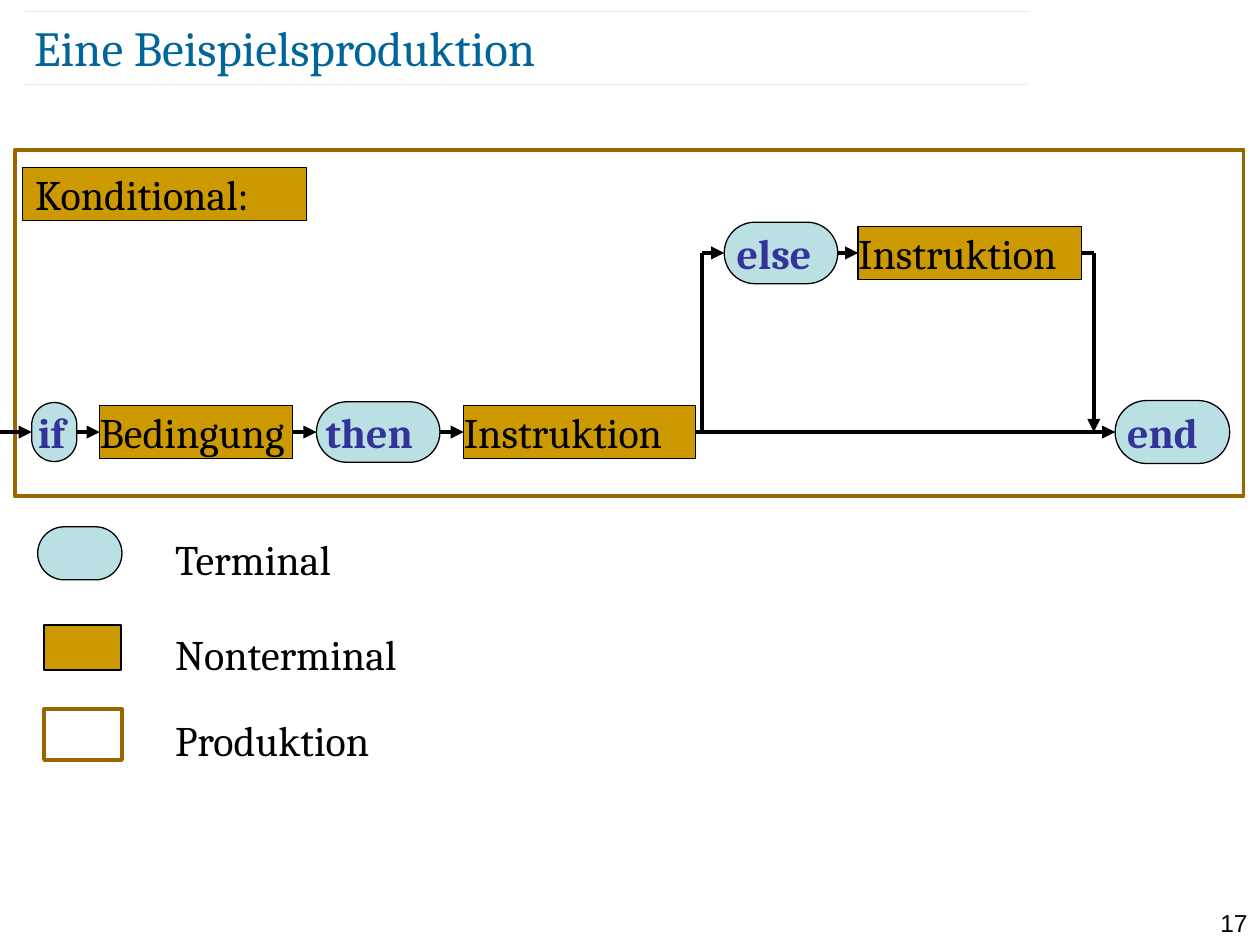
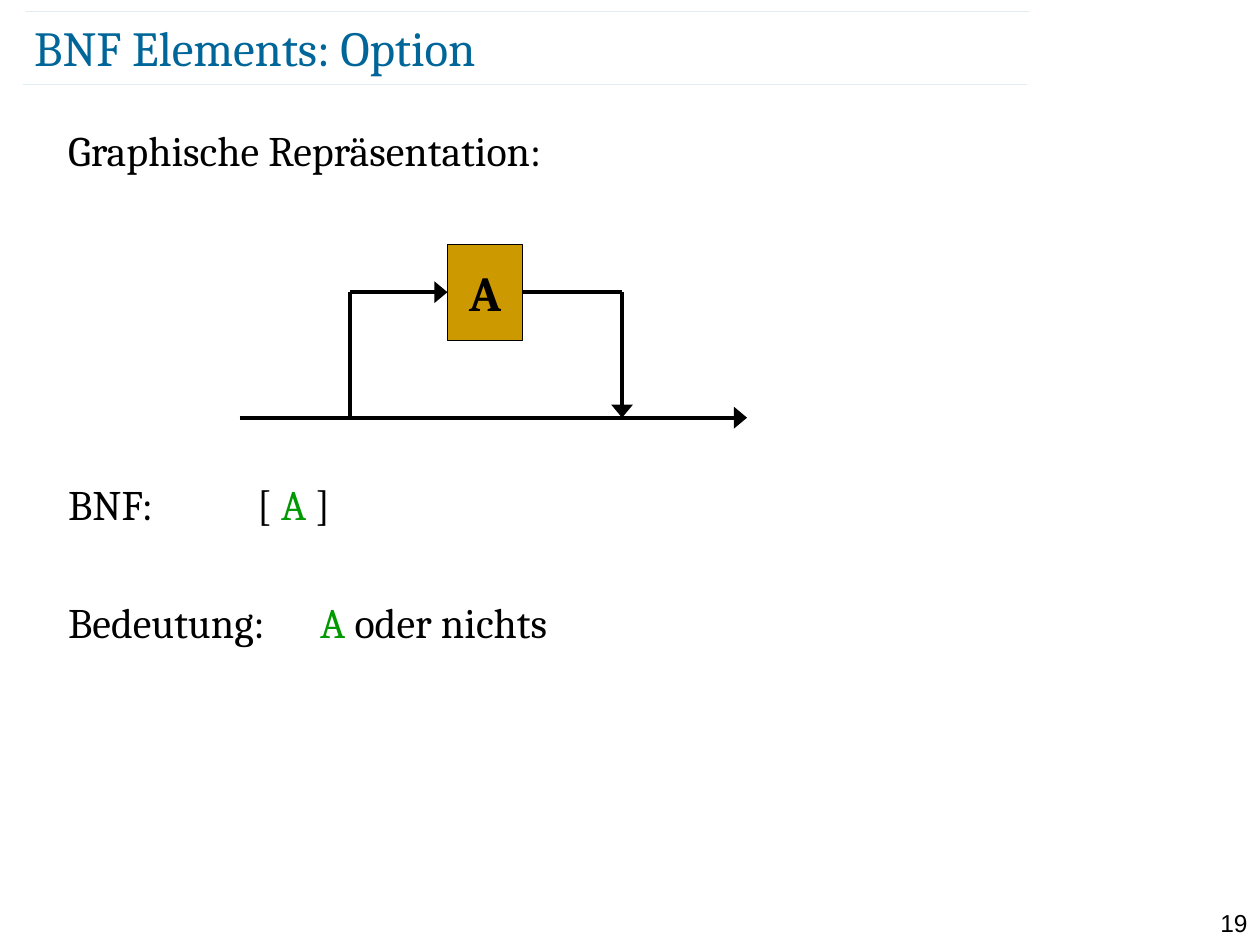
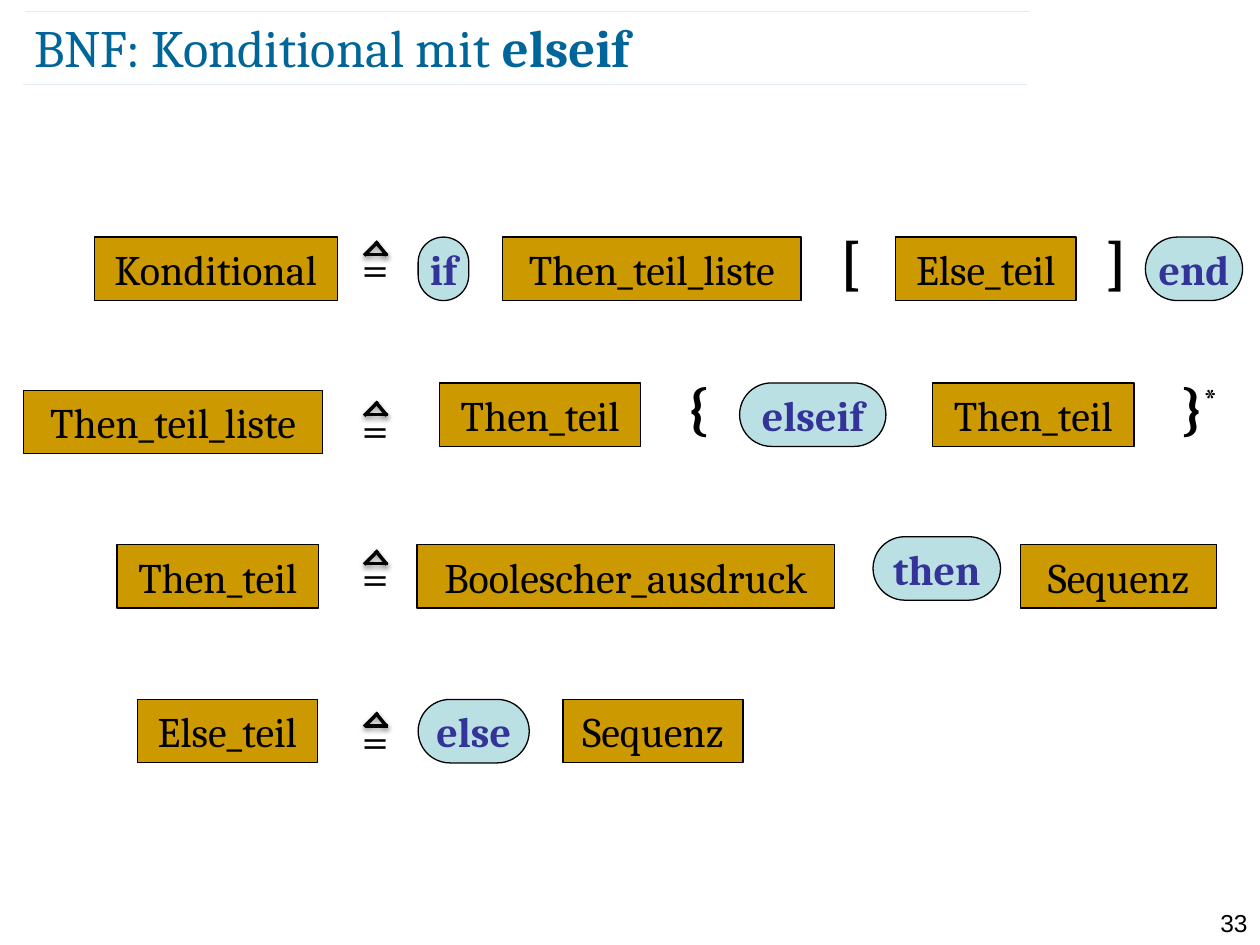
import pptx
import pptx.util
import pptx.dml.color
import pptx.enum.shapes
import pptx.enum.text
import pptx.oxml
import pptx.oxml.ns
from lxml import etree

Cm = pptx.util.Cm
Pt = pptx.util.Pt
RGBColor = pptx.dml.color.RGBColor
MSO_SHAPE = pptx.enum.shapes.MSO_SHAPE
MSO_ANCHOR = pptx.enum.text.MSO_ANCHOR
PP_ALIGN = pptx.enum.text.PP_ALIGN
qn = pptx.oxml.ns.qn

# Shared look
BLUE = RGBColor(0x00, 0x66, 0x99)
BLACK = RGBColor(0x00, 0x00, 0x00)
GOLD = RGBColor(0xCC, 0x99, 0x00)
BROWN = RGBColor(0x99, 0x66, 0x00)
PALE = RGBColor(0xBB, 0xE0, 0xE3)
INDIGO = RGBColor(0x33, 0x33, 0x99)
GREEN = RGBColor(0x00, 0x99, 0x00)
SERIF, SANS = "Cambria", "Arial"
LEFT, CENTER, RIGHT = PP_ALIGN.LEFT, PP_ALIGN.CENTER, PP_ALIGN.RIGHT


# Text and shape helpers
def add_run(p, text, size=24, color=BLACK, bold=False, font=SERIF):
    r = p.add_run()
    r.text = text
    r.font.name, r.font.size, r.font.bold = font, Pt(size), bold
    r.font.color.rgb = color
    return r


def set_margins(tf, left=0, right=0, top=0, bottom=0):
    tf.margin_left, tf.margin_right = Cm(left), Cm(right)
    tf.margin_top, tf.margin_bottom = Cm(top), Cm(bottom)


def add_text(s, x, y, w, h, text, align=LEFT, wrap=True, **style):
    tf = s.shapes.add_textbox(Cm(x), Cm(y), Cm(w), Cm(h)).text_frame
    tf.word_wrap = wrap
    p = tf.paragraphs[0]
    p.alignment = align
    add_run(p, text, **style)
    return p


def add_box(s, x, y, w, h, fill=GOLD, line=BLACK, width=0.75,
            kind=MSO_SHAPE.RECTANGLE):
    sp = s.shapes.add_shape(kind, Cm(x), Cm(y), Cm(w), Cm(h))
    sp.shadow.inherit = False
    if fill is None:
        sp.fill.background()
    else:
        sp.fill.solid()
        sp.fill.fore_color.rgb = fill
    sp.line.color.rgb = line
    sp.line.width = Pt(width)
    return sp


def add_pill(s, x, y, w, h):
    sp = add_box(s, x, y, w, h, PALE, kind=MSO_SHAPE.ROUNDED_RECTANGLE)
    sp.adjustments[0] = 0.5
    return sp


def label(sp, text, align=CENTER, wrap=False, left=0, right=0, **style):
    tf = sp.text_frame
    tf.word_wrap = wrap
    tf.vertical_anchor = MSO_ANCHOR.MIDDLE
    set_margins(tf, left, right)
    p = tf.paragraphs[0]
    p.alignment = align
    add_run(p, text, **style)


def terminal(s, x, y, w, h, text, right=0):
    label(add_pill(s, x, y, w, h), text, right=right, color=INDIGO, bold=True)


def nonterminal(s, x, y, w, h, text, **layout):
    label(add_box(s, x, y, w, h), text, **layout)


def add_line(s, x1, y1, x2, y2, head=None, width=2.5, color=BLACK):
    """Straight line; head is the width of its arrowhead (med or lg)."""
    c = s.shapes.add_connector(pptx.enum.shapes.MSO_CONNECTOR.STRAIGHT,
                               Cm(x1), Cm(y1), Cm(x2), Cm(y2))
    c.line.color.rgb = color
    c.line.width = Pt(width)
    ln = c.line._ln
    if head:
        etree.SubElement(ln, qn("a:tailEnd"), type="triangle", w=head, len="med")
    etree.SubElement(ln.getparent(), qn("a:effectLst"))
    return c


def add_path(s, points, head=None):
    """Right-angled path whose last leg carries the arrowhead."""
    legs = list(zip(points, points[1:]))
    for i, (a, b) in enumerate(legs):
        add_line(s, *a, *b, head if i == len(legs) - 1 else None)


# Frame of every slide: hairlines, title, page number
def start_slide(prs, layout, number, title, size=28):
    s = prs.slides.add_slide(prs.slide_layouts[layout])
    for x, y in ((0.46, 1.7), (0.51, 0.23)):
        c = add_line(s, x, y, x + 20.24, y, width=0.1, color=BLUE)
        for clr in c.line._ln.iter(qn("a:srgbClr")):
            etree.SubElement(clr, qn("a:alpha"), val="35000")
    add_text(s, 24, 18.19, 1.4, 0.61, number, RIGHT, size=14, font=SANS)

    sp = s.shapes.title
    sp.left, sp.top, sp.width, sp.height = Cm(0.69), Cm(0.33), Cm(22.07), Cm(1.22)
    tf = sp.text_frame
    tf.auto_size = pptx.enum.text.MSO_AUTO_SIZE.NONE
    tf.vertical_anchor = MSO_ANCHOR.MIDDLE
    set_margins(tf)
    p = tf.paragraphs[0]
    p.alignment = LEFT
    for text, bold in title:
        add_run(p, text, size, BLUE, bold)
    return s


# Slide 1: syntax diagram of the conditional
def production_diagram(s, x, y, w, h):
    add_box(s, x, y, w, h, None, BROWN, 2.25)
    nonterminal(s, x + 0.16, y + 0.36, 5.72, 1.07, "Konditional:",
                align=LEFT, wrap=True, left=0.25)
    main, upper = y + 5.69, y + 2.08

    # kind, text, left, width, height, right margin
    lane = [(terminal, "if", 0.34, 0.91, 1.19, 0.12),
            (nonterminal, "Bedingung", 1.71, 3.89, 1.07, 0),
            (terminal, "then", 6.08, 2.49, 1.22, 0.36),
            (nonterminal, "Instruktion", 9.05, 4.67, 1.07, 0),
            (terminal, "end", 22.18, 2.31, 1.27, 0.4)]
    branch = [(terminal, "else", 14.3, 2.29, 1.24, 0.28),
              (nonterminal, "Instruktion", 17, 4.5, 1.07, 0)]

    def draw_lane(nodes, mid, end):
        for kind, text, dx, nw, nh, right in nodes:
            if end is not None:
                add_line(s, end, mid, x + dx, mid, "med")
            layout = {"right": right}
            if kind is nonterminal:
                layout.update(align=LEFT, wrap=True)
            kind(s, x + dx, mid - nh / 2, nw, nh, text, **layout)
            end = x + dx + nw

    draw_lane(lane, main, 0)
    draw_lane(branch, upper, None)
    fork, join = x + 13.85, x + 21.75
    add_path(s, [(fork, main), (fork, upper), (x + 14.3, upper)], "med")
    add_path(s, [(x + 21.5, upper), (join, upper), (join, main)], "med")


def legend(s, x, y):
    add_pill(s, x, y, 1.7, 1.07)
    add_box(s, x + 0.13, y + 1.98, 1.55, 0.91)
    add_box(s, x + 0.13, y + 3.68, 1.57, 1.02, None, BROWN, 2.25)
    for dy, text in ((0.02, "Terminal"), (1.93, "Nonterminal"), (3.65, "Produktion")):
        add_text(s, x + 2.52, y + dy, 6.15, 1.27, text)


def production_slide(prs):
    s = start_slide(prs, 5, "17", [("Eine Beispielsproduktion", False)])
    production_diagram(s, 0.3, 3.02, 24.77, 6.99)
    legend(s, 0.76, 10.62)


# Slide 2: the optional element
def option_text(sp, x, y, w, h):
    sp.left, sp.top, sp.width, sp.height = Cm(x), Cm(y), Cm(w), Cm(h)
    tf = sp.text_frame
    tf.auto_size = pptx.enum.text.MSO_AUTO_SIZE.NONE
    lines = [(0, [("Graphische Repräsentation:", BLACK)]),
             (173, [("BNF:\t\t[ ", BLACK), ("A ", GREEN), ("]", BLACK)]),
             (39, [("Bedeutung:\t", BLACK), ("A ", GREEN), ("oder nichts", BLACK)])]
    for i, (space, runs) in enumerate(lines):
        p = tf.add_paragraph() if i else tf.paragraphs[0]
        pPr = p._p.get_or_add_pPr()
        pPr.set("marL", "0")
        pPr.set("indent", "0")
        etree.SubElement(pPr, qn("a:buNone"))
        p.space_before = Pt(space)
        for text, color in runs:
            add_run(p, text, color=color)


def option_diagram(s, x, y):
    main, upper = y + 3.49, y + 0.96
    fork, join = x + 2.23, x + 7.71
    add_line(s, x, main, x + 10.23, main, "lg")
    add_path(s, [(fork, main), (fork, upper), (x + 4.19, upper)], "lg")
    add_path(s, [(x + 5.71, upper), (join, upper), (join, main)], "lg")
    nonterminal(s, x + 4.19, y, 1.52, 1.93, "A", size=28, bold=True)


def option_slide(prs):
    s = start_slide(prs, 1, "19", [("BNF Elements: Option", False)])
    option_text(s.placeholders[1], 1.12, 2.39, 24.21, 11.61)
    option_diagram(s, 4.83, 4.93)


# Slide 3: grammar rules
def defined_as(s, x, y):
    """Equals sign below a small triangle."""
    add_text(s, x, y, 1.07, 1.45, "=", size=28)
    for x1, y1, x2, y2 in ((0.53, 0.2, 0.76, 0.48), (0.58, 0.2, 0.3, 0.48),
                           (0.79, 0.46, 0.33, 0.46)):
        c = add_line(s, x + x1, y + y1, x + x2, y + y2, width=2)
        effects = c.line._ln.getparent().find(qn("a:effectLst"))
        shadow = etree.SubElement(effects, qn("a:outerShdw"), blurRad="40000",
                                  dist="20000", dir="5400000", rotWithShape="0")
        clr = etree.SubElement(shadow, qn("a:srgbClr"), val="000000")
        etree.SubElement(clr, qn("a:alpha"), val="38000")


def bracket(s, x, y, w, h, text):
    p = add_text(s, x, y - 0.33, w, h + 0.35, text[0], CENTER, False,
                 size=32, bold=True)
    if text[1:]:
        r = add_run(p, text[1:], 32, bold=True)
        r.font._element.set("baseline", "30000")


def grammar_rule(s, y, sign_dy, nodes):
    defined_as(s, 7.04, y + sign_dy)
    for kind, text, x, w, dy in nodes:
        kind(s, x, y + dy, w, 1.28, text)


def grammar_slide(prs):
    s = start_slide(prs, 5, "33", [("BNF: Konditional mit ", False),
                                   ("elseif", True)], 30)
    # top, offset of the sign, then kind, text, left, width, offset of each part
    rules = [
        (4.78, -0.11, [(nonterminal, "Konditional", 1.9, 4.9, 0),
                       (terminal, "if", 8.43, 1.02, 0),
                       (nonterminal, "Then_teil_liste", 10.13, 6.02, 0),
                       (bracket, "[", 16.69, 0.94, 0),
                       (nonterminal, "Else_teil", 18.06, 3.63, 0),
                       (bracket, "]", 22.05, 0.94, 0),
                       (terminal, "end", 23.09, 1.96, 0)]),
        (7.72, 0.18, [(nonterminal, "Then_teil_liste", 0.48, 6.02, 0.15),
                      (nonterminal, "Then_teil", 8.86, 4.06, 0),
                      (bracket, "{", 13.61, 0.91, 0),
                      (terminal, "elseif", 14.91, 2.95, 0),
                      (nonterminal, "Then_teil", 18.8, 4.06, 0),
                      (bracket, "}*", 23.55, 1.27, 0)]),
        (10.98, -0.08, [(nonterminal, "Then_teil", 2.36, 4.06, 0),
                        (nonterminal, "Boolescher_ausdruck", 8.41, 8.41, 0),
                        (terminal, "then", 17.6, 2.57, -0.16),
                        (nonterminal, "Sequenz", 20.57, 3.96, 0)]),
        (14.1, 0.07, [(nonterminal, "Else_teil", 2.77, 3.63, 0),
                      (terminal, "else", 8.43, 2.24, 0),
                      (nonterminal, "Sequenz", 11.35, 3.63, 0)]),
    ]
    for rule in rules:
        grammar_rule(s, *rule)


def main():
    prs = pptx.Presentation()
    prs.slide_width, prs.slide_height = Cm(25.4), Cm(19.05)
    production_slide(prs)
    option_slide(prs)
    grammar_slide(prs)
    prs.save("out.pptx")


if __name__ == "__main__":
    main()
